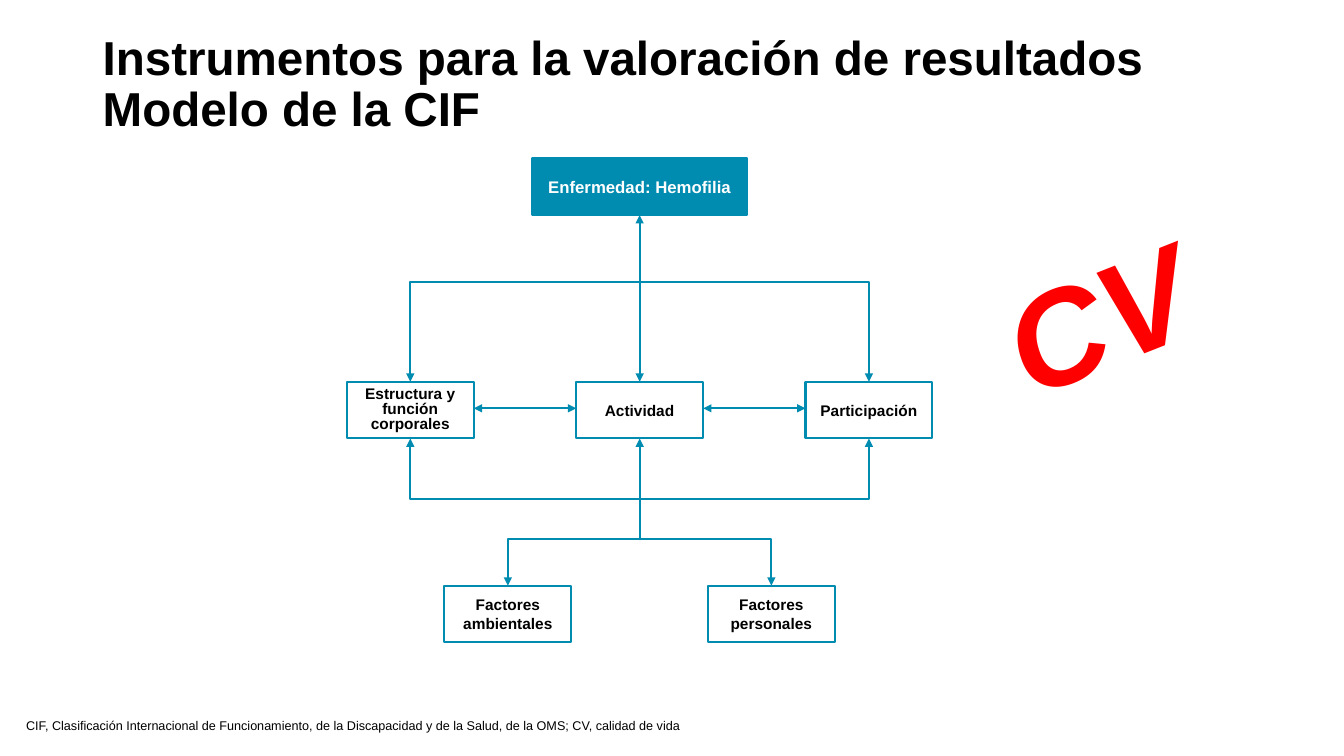
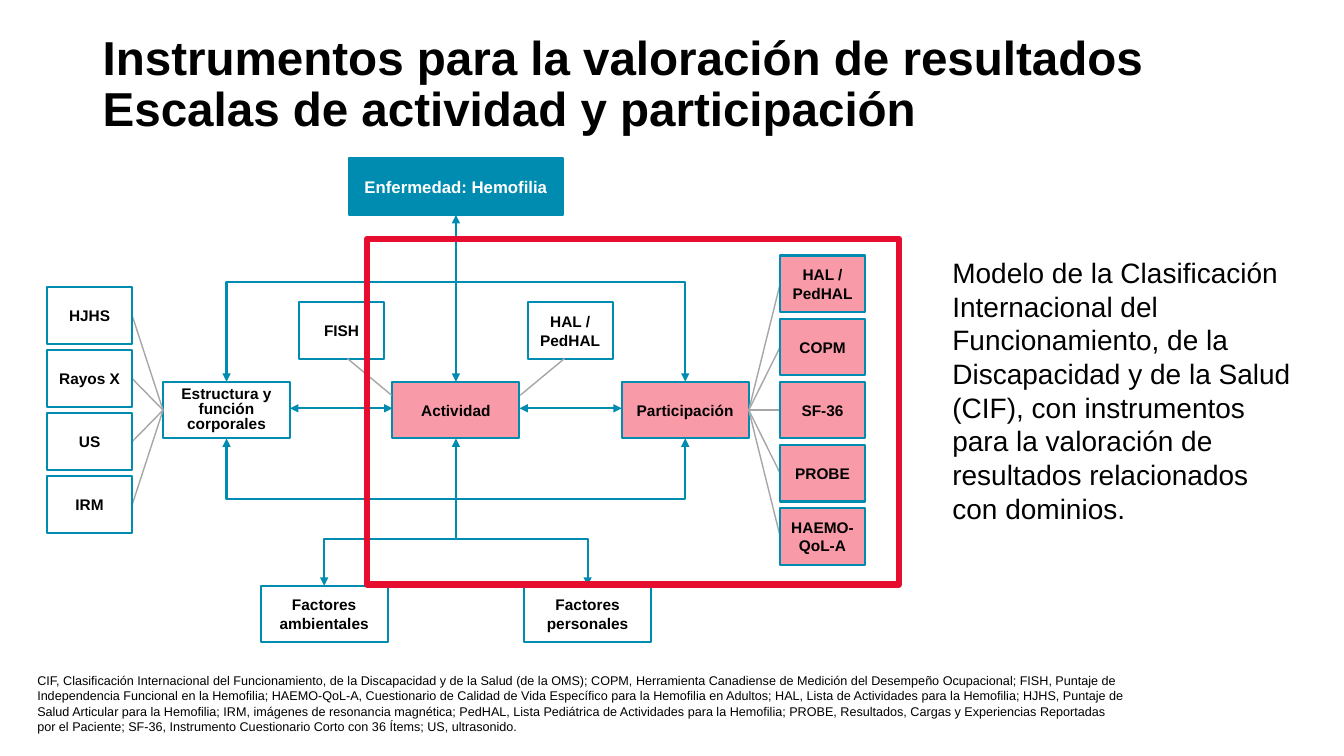
"""Builds two slides on the ICF model and its outcome instruments in haemophilia."""
from pptx import Presentation
from pptx.dml.color import RGBColor
from pptx.enum import shapes, text
from pptx.oxml.ns import qn
from pptx.util import Cm, Pt
from lxml import etree

COLORS = {"teal": "008BB0", "pink": "F99AA8", "red": "E60D2E", "cv": "FF0000",
          "gray": "A6A6A6", "black": "000000", "white": "FFFFFF"}
FONT = "Arial"
TITLE = "Instrumentos para la valoración de resultados"
DISEASE = "Enfermedad: Hemofilia"
DOMAINS = ["Estructura y función corporales", "Actividad", "Participación"]
FACTORS = ["Factores ambientales", "Factores personales"]
BODY_TOOLS = ["HJHS", "Rayos X", "US", "IRM"]
ACTIVITY_TOOLS = ["FISH", "HAL / PedHAL"]
PARTICIPATION_TOOLS = ["HAL / PedHAL", "COPM", "SF-36", "PROBE", "HAEMO-QoL-A"]

MODEL = {
    "subtitle": "Modelo de la CIF",
    "center": 16.12,
    "highlight": [],
    "footer": "CIF, Clasificación Internacional de Funcionamiento, de la Discapacidad "
              "y de la Salud, de la OMS; CV, calidad de vida",
    "footer_box": (0.41, 17.83, 20.62, 0.64),
}
SCALES = {
    "subtitle": "Escalas de actividad y participación",
    "center": 11.49,
    "highlight": ["Actividad", "Participación"],
    "footer": "CIF, Clasificación Internacional del Funcionamiento, de la Discapacidad "
              "y de la Salud (de la OMS); COPM, Herramienta Canadiense de Medición del "
              "Desempeño Ocupacional; FISH, Puntaje de Independencia Funcional en la "
              "Hemofilia; HAEMO-QoL-A, Cuestionario de Calidad de Vida Específico para "
              "la Hemofilia en Adultos; HAL, Lista de Actividades para la Hemofilia; "
              "HJHS, Puntaje de Salud Articular para la Hemofilia; IRM, imágenes de "
              "resonancia magnética; PedHAL, Lista Pediátrica de Actividades para la "
              "Hemofilia; PROBE, Resultados, Cargas y Experiencias Reportadas por el "
              "Paciente; SF-36, Instrumento Cuestionario Corto con 36 Ítems; "
              "US, ultrasonido.",
    "footer_box": (0.69, 16.74, 27.91, 1.75),
}
SIDE_TEXT = ("Modelo de la Clasificación Internacional del Funcionamiento, de la "
             "Discapacidad y de la Salud (CIF), con instrumentos para la valoración "
             "de resultados relacionados con dominios.")

BOX_W, BOX_H, TOOL_W, TOOL_PITCH = 3.2, 1.43, 2.14, 1.59
DOMAIN_STEP, FACTOR_STEP = 5.78, 3.32
DISEASE_Y, DOMAIN_Y, FACTOR_Y = 3.99, 9.62, 14.76
UPPER_BUS, LOWER_BUS, FACTOR_BUS = 7.1, 12.57, 13.59
DOMAIN_MID, DOMAIN_END = DOMAIN_Y + BOX_H / 2, DOMAIN_Y + BOX_H


def rgb(name):
    return RGBColor.from_string(COLORS[name])


def write(tf, lines, size, color="black", bold=False, italic=False, spacing=None,
          align=None, anchor=text.MSO_ANCHOR.TOP):
    tf.word_wrap = True
    tf.vertical_anchor = anchor
    p = tf.paragraphs[0]
    p.alignment = align
    p.line_spacing = spacing
    for i, line in enumerate(lines):
        if i:
            p.add_line_break()
        r = p.add_run()
        r.text = line
        r.font.name, r.font.size = FONT, Pt(size)
        r.font.bold, r.font.italic = bold, italic
        r.font.color.rgb = rgb(color)


def textbox(s, area, lines, size, **style):
    sp = s.shapes.add_textbox(*map(Cm, area))
    write(sp.text_frame, lines, size, **style)
    return sp


def rect(s, area, fill, line="teal", width=1.5):
    sp = s.shapes.add_shape(shapes.MSO_SHAPE.RECTANGLE, *map(Cm, area))
    sp.shadow.inherit = False
    if fill:
        sp.fill.solid()
        sp.fill.fore_color.rgb = rgb(fill)
    else:
        sp.fill.background()
    sp.line.color.rgb = rgb(line)
    sp.line.width = Pt(width)
    return sp


def box(s, label, cx, top, w=BOX_W, fill="white", color="black", size=11, spacing=None):
    sp = rect(s, (cx - w / 2, top, w, BOX_H), fill)
    write(sp.text_frame, [label], size, color, bold=True, spacing=spacing,
          align=text.PP_ALIGN.CENTER, anchor=text.MSO_ANCHOR.MIDDLE)


def stroke(sp, color, width, ends):
    sp.line.color.rgb = rgb(color)
    sp.line.width = Pt(width)
    ln = sp.line._get_or_add_ln()
    for end in ends:
        etree.SubElement(ln, qn(f"a:{end}"), type="triangle")


def line(s, start, end, color="teal", width=1.5, ends=()):
    c = s.shapes.add_connector(shapes.MSO_CONNECTOR.STRAIGHT, *map(Cm, start + end))
    stroke(c, color, width, ends)
    etree.SubElement(c._element.spPr, qn("a:effectLst"))


def link(s, start, end):
    line(s, start, end, "gray", 1)


def elbow(s, cx, bus, x, y):
    fb = s.shapes.build_freeform(Cm(cx), Cm(bus))
    fb.add_line_segments([(Cm(x), Cm(bus)), (Cm(x), Cm(y))], close=False)
    sp = fb.convert_to_shape()
    sp.shadow.inherit = False
    sp.fill.background()
    stroke(sp, "teal", 1.5, ["tailEnd"])


def draw_model(s, cx, highlight):
    both = ["headEnd", "tailEnd"]
    box(s, DISEASE, cx, DISEASE_Y, 5.4, "teal", "white", 12)
    for i, name in enumerate(DOMAINS):
        box(s, name, cx + (i - 1) * DOMAIN_STEP, DOMAIN_Y,
            fill="pink" if name in highlight else "white",
            spacing=0.8 if i == 0 else None)
    for side, name in zip((-1, 1), FACTORS):
        box(s, name, cx + side * FACTOR_STEP, FACTOR_Y)
        domain_x = cx + side * DOMAIN_STEP
        elbow(s, cx, UPPER_BUS, domain_x, DOMAIN_Y)
        elbow(s, cx, LOWER_BUS, domain_x, DOMAIN_END)
        elbow(s, cx, FACTOR_BUS, cx + side * FACTOR_STEP, FACTOR_Y)
        line(s, (cx + side * BOX_W / 2, 10.29), (domain_x - side * BOX_W / 2, 10.29),
             ends=both)
    line(s, (cx, DISEASE_Y + BOX_H), (cx, DOMAIN_Y), ends=both)
    line(s, (cx, DOMAIN_END), (cx, FACTOR_BUS), ends=["headEnd"])


def draw_tools(s, names, cx, side, domain_x, fill):
    for i, name in enumerate(names):
        mid = DOMAIN_MID + (i - (len(names) - 1) / 2) * TOOL_PITCH
        link(s, (domain_x + side * BOX_W / 2, DOMAIN_MID), (cx - side * TOOL_W / 2, mid))
        box(s, name, cx, mid - BOX_H / 2, TOOL_W, fill)


def base_slide(prs, data):
    s = prs.slides.add_slide(prs.slide_layouts[6])
    textbox(s, (2.34, 0.64, 29.21, 3.02), [TITLE, data["subtitle"]], 34, bold=True,
            spacing=0.9, anchor=text.MSO_ANCHOR.MIDDLE)
    footer = textbox(s, data["footer_box"], [data["footer"]], 9,
                     anchor=text.MSO_ANCHOR.BOTTOM)
    footer.text_frame.margin_bottom = 0
    draw_model(s, data["center"], data["highlight"])
    return s


def model_slide(prs):
    s = base_slide(prs, MODEL)
    cv = textbox(s, (25.04, 5.64, 5.89, 4.37), ["CV"], 96, color="cv", bold=True,
                 italic=True)
    cv.rotation = 338.3


def scales_slide(prs):
    s = base_slide(prs, SCALES)
    cx = SCALES["center"]
    draw_tools(s, BODY_TOOLS, 2.26, -1, cx - DOMAIN_STEP, "white")
    draw_tools(s, PARTICIPATION_TOOLS, 20.73, 1, cx + DOMAIN_STEP, "pink")
    for side, name in zip((-1, 1), ACTIVITY_TOOLS):
        box(s, name, cx + side * 2.88, 7.62, TOOL_W)
        link(s, (cx + side * 2.74, 9.03), (cx + side * 1.62, 9.96))
    rect(s, (9.25, 6.02, 13.41, 8.71), None, "red", 4.5)
    textbox(s, (23.75, 6.32, 9.09, 7.09), [SIDE_TEXT], 20)


def main():
    prs = Presentation()
    prs.slide_width, prs.slide_height = Cm(33.87), Cm(19.05)
    model_slide(prs)
    scales_slide(prs)
    prs.save("out.pptx")


if __name__ == "__main__":
    main()
